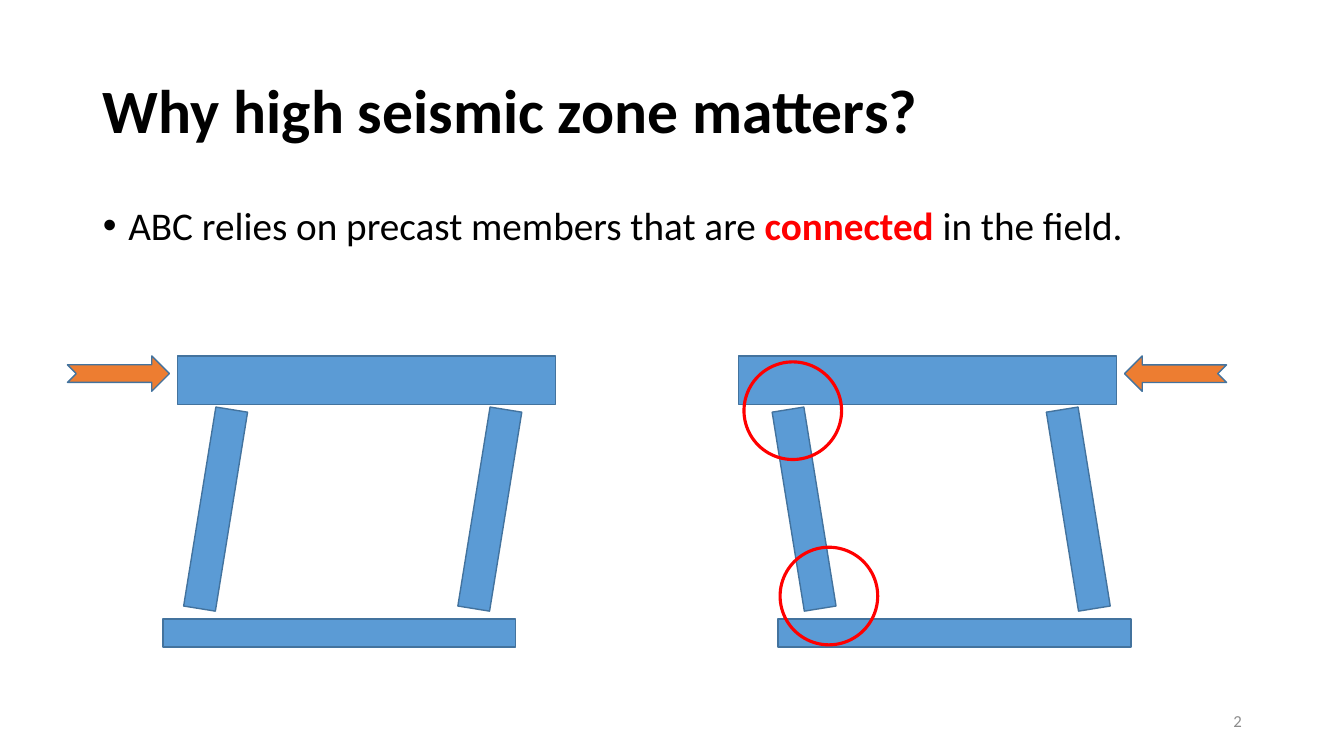
"""Build the slide on why high seismic zones matter for precast bridges."""
from pptx import Presentation
from pptx.dml.color import RGBColor
from pptx.enum.shapes import MSO_SHAPE as Shape
from pptx.enum.text import MSO_ANCHOR as Anchor, MSO_AUTO_SIZE as AutoSize, PP_ALIGN as Align
from pptx.util import Cm, Pt

TITLE = [("Why high seismic zone matters?", "000000", True)]
BULLET = [
    ("ABC relies on precast members that are ", "000000", False),
    ("connected", "FF0000", True),
    (" in the field.", "000000", False),
]
PAGE_NUMBER = [("2", "8C8C8C", False)]

BLUE, ORANGE, OUTLINE, RED = "5B9BD5", "ED7D31", "43739E", "FF0000"
LEAN = 9.2
MIRROR_WIDTH = 32.61
FRAME_PARTS = [
    (Shape.RECTANGLE, (4.47, 8.97, 9.53, 1.22), 0, BLUE),
    (Shape.RECTANGLE, (5.03, 10.29, 0.81, 5.08), LEAN, BLUE),
    (Shape.RECTANGLE, (4.11, 15.6, 8.89, 0.71), 0, BLUE),
    (Shape.RECTANGLE, (11.94, 10.29, 0.81, 5.08), LEAN, BLUE),
    (Shape.NOTCHED_RIGHT_ARROW, (1.7, 8.97, 2.57, 0.89), 0, ORANGE),
]
JOINT_SIZE = 2.46
JOINTS = [(18.75, 9.12), (19.66, 13.79)]


def color(value):
    return RGBColor.from_string(value)


def place(shape, left, top, width, height):
    shape.left, shape.top = Cm(left), Cm(top)
    shape.width, shape.height = Cm(width), Cm(height)


def write(shape, runs, size, align, anchor):
    frame = shape.text_frame
    frame.word_wrap = True
    frame.auto_size = AutoSize.NONE
    frame.vertical_anchor = anchor
    paragraph = frame.paragraphs[0]
    paragraph.alignment = align
    for text, run_color, bold in runs:
        run = paragraph.add_run()
        run.text = text
        run.font.name = "Calibri"
        run.font.size = Pt(size)
        run.font.bold = bold
        run.font.color.rgb = color(run_color)
    return paragraph


def draw(shapes, kind, box, line, weight, fill=None):
    shape = shapes.add_shape(kind, *map(Cm, box))
    shape.shadow.inherit = False
    if fill:
        shape.fill.solid()
        shape.fill.fore_color.rgb = color(fill)
    else:
        shape.fill.background()
    shape.line.color.rgb = color(line)
    shape.line.width = Pt(weight)
    return shape


def draw_frame(slide, mirrored):
    group = slide.shapes.add_group_shape()
    for kind, (left, top, width, height), angle, fill in FRAME_PARTS:
        if mirrored:
            left = MIRROR_WIDTH - left - width
            angle = 180 if kind == Shape.NOTCHED_RIGHT_ARROW else -angle
        part = draw(group.shapes, kind, (left, top, width, height), OUTLINE, 1, fill)
        part.rotation = angle


def main():
    presentation = Presentation()
    presentation.slide_width, presentation.slide_height = Cm(33.87), Cm(19.05)
    slide = presentation.slides.add_slide(presentation.slide_layouts[1])

    title, body = slide.placeholders
    place(title, 2.34, 1.02, 29.21, 3.68)
    write(title, TITLE, 44, Align.LEFT, Anchor.MIDDLE).line_spacing = 0.9

    place(body, 2.34, 5.08, 29.21, 1.5)
    bullet = write(body, BULLET, 28, Align.LEFT, Anchor.TOP)
    bullet.line_spacing = 0.9
    bullet.space_before = Pt(10)
    properties = bullet._p.get_or_add_pPr()
    properties.set("marL", str(Cm(0.64)))
    properties.set("indent", str(Cm(-0.64)))

    for mirrored in (False, True):
        draw_frame(slide, mirrored)
    for left, top in JOINTS:
        draw(slide.shapes, Shape.OVAL, (left, top, JOINT_SIZE, JOINT_SIZE), RED, 2.25)

    number = slide.shapes.add_textbox(Cm(23.93), Cm(17.65), Cm(7.62), Cm(1.02))
    write(number, PAGE_NUMBER, 12, Align.RIGHT, Anchor.MIDDLE)
    presentation.save("out.pptx")


if __name__ == "__main__":
    main()
